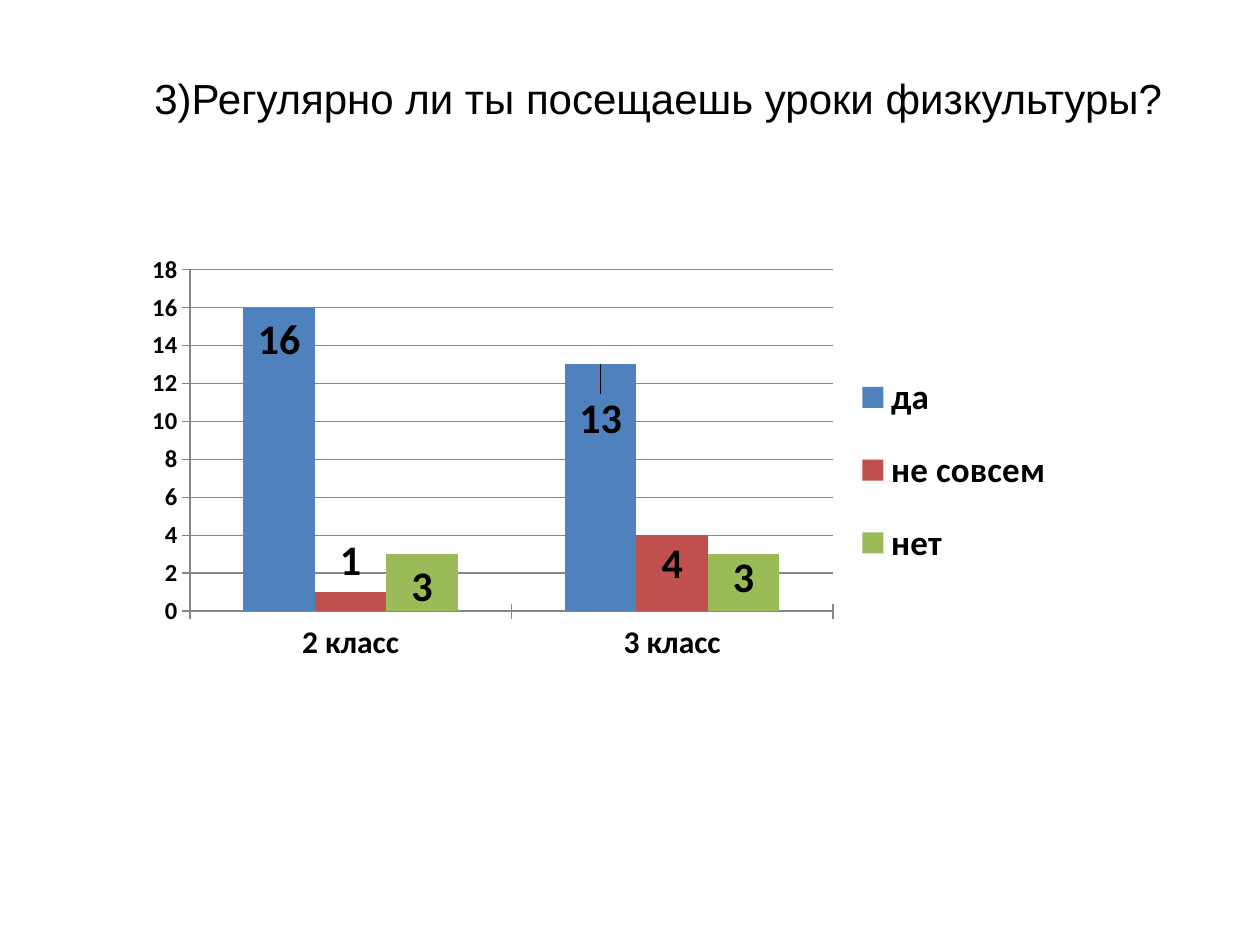
"""Builds a survey slide with a clustered column chart of PE lesson attendance."""
from lxml.etree import SubElement
from pptx import Presentation
from pptx.chart.data import CategoryChartData
from pptx.dml.color import RGBColor
from pptx.enum.chart import XL_CHART_TYPE, XL_LABEL_POSITION, XL_LEGEND_POSITION, XL_TICK_MARK
from pptx.enum.text import MSO_ANCHOR, MSO_AUTO_SIZE, PP_ALIGN
from pptx.oxml.ns import qn
from pptx.util import Pt

PX = 914400 // 126
COLORS = {"text": "000000", "line": "868686", "да": "4F81BD", "не совсем": "C0504D", "нет": "9BBB59"}


def add_text(s, text, x, y, w, h, size=24, font="Arial", color="text", align=PP_ALIGN.JUSTIFY):
    tf = s.shapes.add_textbox(x * PX, y * PX, w * PX, h * PX).text_frame
    tf.word_wrap = False
    tf.auto_size = MSO_AUTO_SIZE.SHAPE_TO_FIT_TEXT
    tf.vertical_anchor = MSO_ANCHOR.MIDDLE
    p = tf.paragraphs[0]
    p.alignment = align
    r = p.add_run()
    r.text = text
    r.font.size = Pt(size)
    r.font.name = font
    r.font.color.rgb = RGBColor.from_string(COLORS[color])


def set_layout(parent, index, **values):
    for old in parent.findall(qn("c:layout")):
        parent.remove(old)
    layout = SubElement(parent, qn("c:layout"))
    parent.insert(index, layout)
    manual = SubElement(layout, qn("c:manualLayout"))
    for tag, value in values.items():
        SubElement(manual, qn(f"c:{tag}")).set("val", str(value))


prs = Presentation()
prs.slide_width, prs.slide_height = 1260 * PX, 945 * PX
s = prs.slides.add_slide(prs.slide_layouts[6])
add_text(s, "3)Регулярно ли ты посещаешь уроки физкультуры?", 142, 66, 1043, 63)

data = CategoryChartData()
data.categories = ["2 класс", "3 класс"]
data.add_series("да", (16, 13))
data.add_series("не совсем", (1, 4))
data.add_series("нет", (3, 3))
chart = s.shapes.add_chart(XL_CHART_TYPE.COLUMN_CLUSTERED, 134 * PX, 244 * PX, 932 * PX, 427 * PX, data).chart
chart.has_title = False
chart.font.name = "Calibri"
chart.font.size = Pt(10)
chart.font.color.rgb = RGBColor.from_string(COLORS["text"])

chart.has_legend = True
legend = chart.legend
legend.position = XL_LEGEND_POSITION.RIGHT
legend.include_in_layout = False
val, cat = chart.value_axis, chart.category_axis
val.minimum_scale, val.maximum_scale, val.major_unit = 0, 18, 2
val.has_major_gridlines = True
for part, size in ((cat, 18), (val, 14), (legend, 20)):
    font = part.font if part is legend else part.tick_labels.font
    font.size = Pt(size)
    font.bold = True
    font.name = "Calibri"
    font.color.rgb = RGBColor.from_string(COLORS["text"])
for axis in (cat, val):
    axis.major_tick_mark = XL_TICK_MARK.CROSS
for fmt in (cat.format, val.format, val.major_gridlines.format):
    fmt.line.width = Pt(0.75)
    fmt.line.color.rgb = RGBColor.from_string(COLORS["line"])

plot = chart.plots[0]
plot.gap_width, plot.overlap, plot.vary_by_categories = 150, 0, False
label_drops = {"да": {0: 0.15, 1: 0.2}, "не совсем": {1: 0.14}, "нет": {0: 0.15, 1: 0.13}}
for ser in plot.series:
    ser.format.fill.solid()
    ser.format.fill.fore_color.rgb = RGBColor.from_string(COLORS[ser.name])
    points = [ser.points[i].data_label for i in label_drops[ser.name]]
    ser.data_labels.show_value = True
    for labels in (ser.data_labels, *points):
        labels.position = XL_LABEL_POSITION.OUTSIDE_END
        labels.font.size = Pt(24)
        labels.font.bold = True
        labels.font.name = "Calibri"
        labels.font.color.rgb = RGBColor.from_string(COLORS["text"])
    for label, drop in zip(ser.data_labels._element.findall(qn("c:dLbl")), label_drops[ser.name].values()):
        set_layout(label, 1, x=0, y=drop)

plot_area = chart._chartSpace.find(".//" + qn("c:plotArea"))
set_layout(plot_area, 0, layoutTarget="inner", xMode="edge", yMode="edge", x=0.06, y=0.06, w=0.69, h=0.8)
set_layout(chart._chartSpace.find(".//" + qn("c:legend")), 1,
           xMode="edge", yMode="edge", x=0.77, y=0.24, w=0.22, h=0.58)

prs.save("out.pptx")
